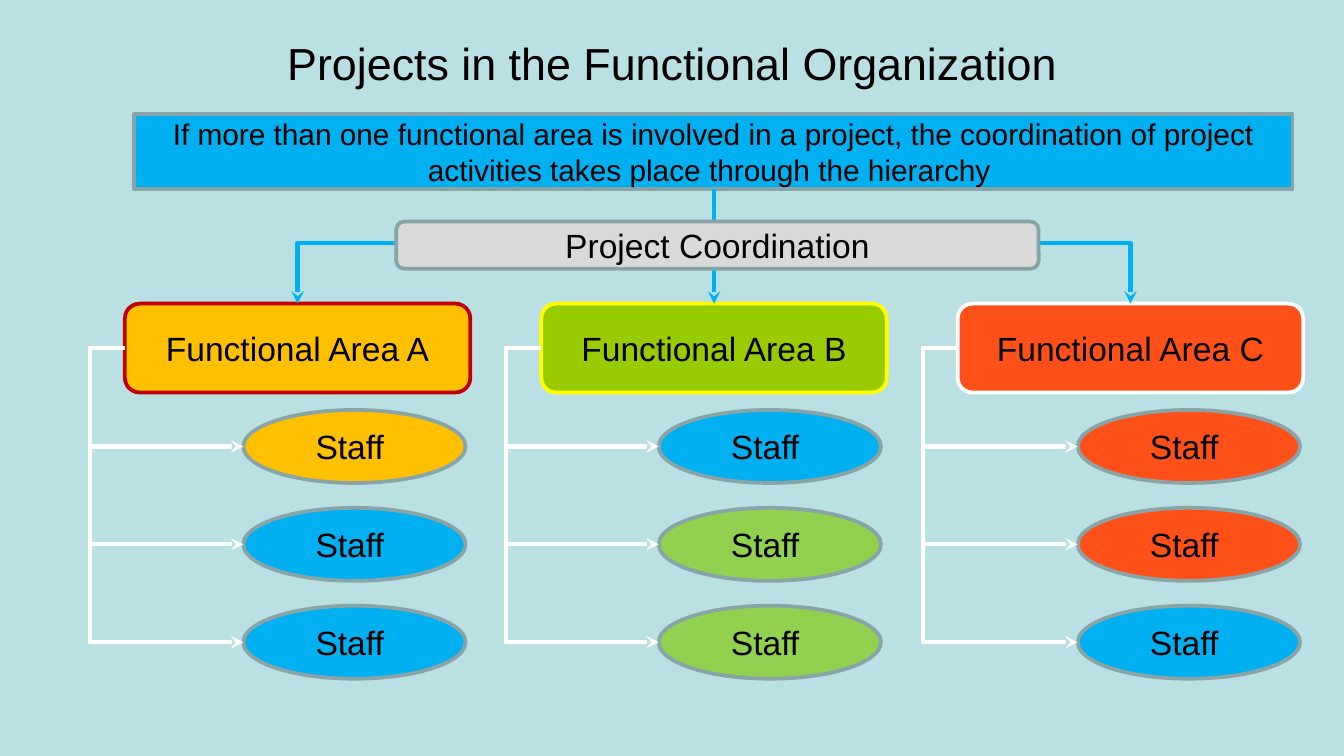
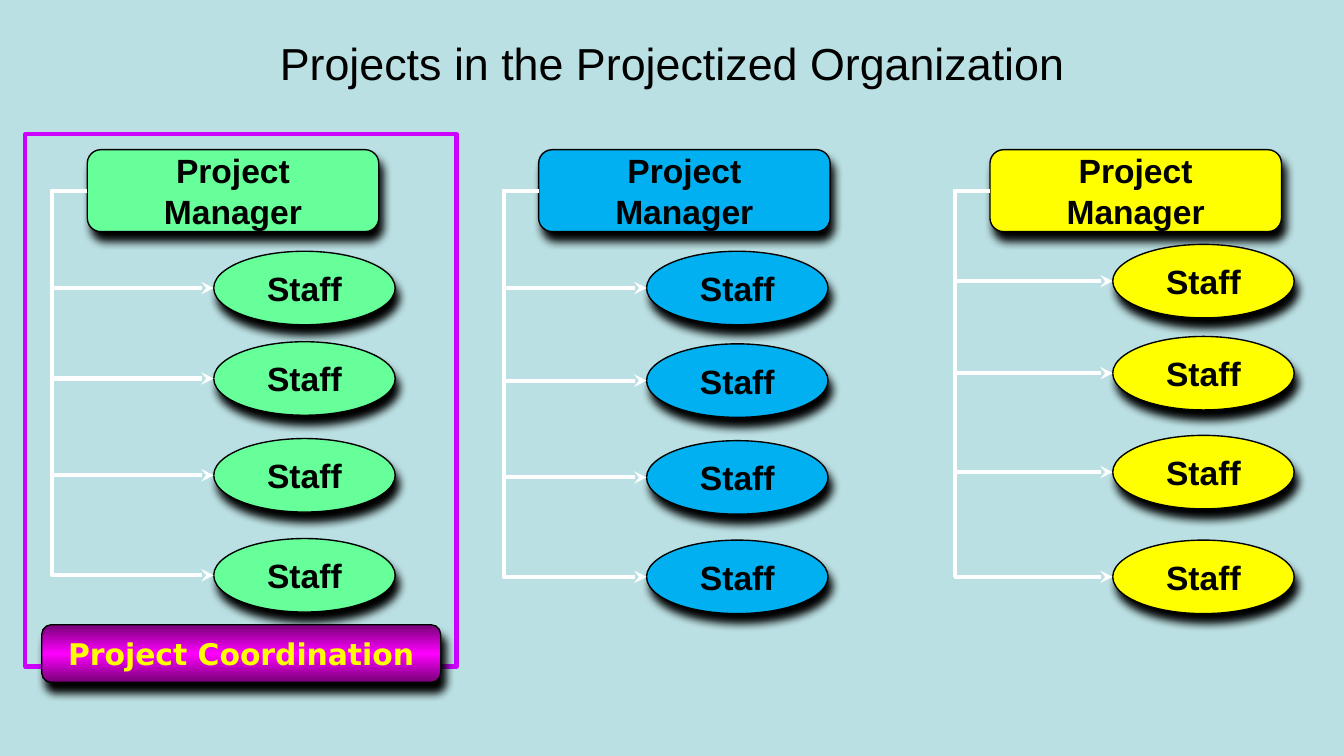
"""Builds two organization charts: functional and projectized projects."""
from copy import deepcopy

from lxml import etree
from pptx import Presentation
from pptx import util as u
from pptx.dml.color import RGBColor
from pptx.enum import shapes, text
from pptx.oxml.ns import qn

COLOURS = {
    "background": "BBE0E3", "black": "000000", "white": "FFFFFF", "outline": "89A4A7",
    "blue": "00B0F0", "amber": "FFC000", "dark red": "C00000", "olive": "99CC00",
    "green": "92D050", "yellow": "FFFF00", "orange": "FF5019", "grey": "D9D9D9",
    "mint": "66FF99", "violet": "CC00FF", "purple": "760076", "magenta": "FF00FF",
}
KINDS = shapes.MSO_SHAPE
BUS_OFFSET = 0.66


def colour(name):
    return RGBColor.from_string(COLOURS[name])


def add_element(parent, tag, **attributes):
    return etree.SubElement(parent, qn(tag), {key: str(value) for key, value in attributes.items()})


def write_text(shape, content, size=18, font="Arial", ink="black", bold=False):
    frame = shape.text_frame
    frame.word_wrap = True
    frame.vertical_anchor = text.MSO_ANCHOR.MIDDLE
    for index, line in enumerate(content.split("\n")):
        paragraph = frame.add_paragraph() if index else frame.paragraphs[0]
        paragraph.alignment = text.PP_ALIGN.CENTER
        run = paragraph.add_run()
        run.text = line
        run.font.size = u.Pt(size)
        run.font.name = font
        run.font.bold = bold
        run.font.color.rgb = colour(ink)


class ChartBuilder:
    """Holds the shared style and the current slide."""

    def __init__(self):
        self.presentation = Presentation()
        self.presentation.slide_width = u.Cm(25.4)
        self.presentation.slide_height = u.Cm(14.29)
        self.slide = None

    def start_slide(self, title):
        self.slide = self.presentation.slides.add_slide(self.presentation.slide_layouts[6])
        fill = self.slide.background.fill
        fill.solid()
        fill.fore_color.rgb = colour("background")
        box = self.slide.shapes.add_textbox(u.Cm(1.27), u.Cm(0), u.Cm(22.86), u.Cm(2.38))
        write_text(box, title, size=24)

    def box(self, kind, bounds, fill=None, line="outline", width=2, shadow=False):
        shape = self.slide.shapes.add_shape(kind, *map(u.Cm, bounds))
        shape.line.color.rgb = colour(line)
        shape.line.width = u.Pt(width)
        if fill:
            shape.fill.solid()
            shape.fill.fore_color.rgb = colour(fill)
        else:
            shape.fill.background()
        shape.shadow.inherit = False
        if shadow:
            effects = shape.element.spPr.find(qn("a:effectLst"))
            outer = add_element(effects, "a:outerShdw", blurRad=u.Pt(5), dist=u.Pt(5.4),
                                dir=68 * 60000, algn="ctr", rotWithShape=0)
            add_element(outer, "a:srgbClr", val=COLOURS["black"])
        return shape

    def labelled(self, kind, bounds, content, fill, **style):
        write_text(self.box(kind, bounds, fill, **style), content)

    def raised(self, kind, bounds, content, fill, **format):
        shape = self.box(kind, bounds, fill, line="black", width=0.75, shadow=True)
        write_text(shape, content, bold=True, **format)
        return shape

    def gradient(self, shape, names):
        shape.fill.gradient()
        shape.fill.gradient_angle = 90
        stop_list = shape.element.spPr.find(".//" + qn("a:gsLst"))
        stop_list.append(deepcopy(stop_list[0]))
        for index, (stop, name) in enumerate(zip(shape.fill.gradient_stops, names)):
            stop.position = index / (len(names) - 1)
            stop.color.rgb = colour(name)

    def arrow(self, start, end, line, geometry="bentConnector3", bend=None):
        connector = self.slide.shapes.add_connector(
            shapes.MSO_CONNECTOR.ELBOW, *map(u.Cm, start + end))
        connector.line.color.rgb = colour(line)
        connector.line.width = u.Pt(2.25)
        properties = connector.element.spPr
        preset = properties.find(qn("a:prstGeom"))
        preset.set("prst", geometry)
        if bend is not None:
            add_element(preset.find(qn("a:avLst")), "a:gd", name="adj1",
                        fmla=f"val {round(bend * 100000)}")
        add_element(properties.find(qn("a:ln")), "a:tailEnd", type="stealth")
        add_element(properties, "a:effectLst")

    def bus(self, start, staff_left, staff_centres):
        bend = -BUS_OFFSET / (staff_left - start[0])
        for centre in staff_centres:
            self.arrow(start, (staff_left, centre), "white", bend=bend)


def build_functional(chart):
    chart.start_slide("Projects in the Functional Organization")
    area_top, area_width, area_height = 5.74, 6.53, 1.68
    staff_width, staff_height = 4.2, 1.38
    staff_tops = [7.75 + 1.85 * row for row in range(3)]
    areas = [
        ("A", "amber", "dark red", 4.6, ("amber", "blue", "blue")),
        ("B", "olive", "yellow", 12.45, ("blue", "green", "green")),
        ("C", "orange", "white", 20.37, ("orange", "orange", "blue")),
    ]
    area_centres = []
    for column, (letter, fill, line, staff_left, staff_fills) in enumerate(areas):
        left = 2.36 + 7.87 * column
        area_centres.append(left + area_width / 2)
        chart.labelled(KINDS.ROUNDED_RECTANGLE, (left, area_top, area_width, area_height),
                       f"Functional Area {letter}", fill, line=line)
        for top, staff_fill in zip(staff_tops, staff_fills):
            chart.labelled(KINDS.OVAL, (staff_left, top, staff_width, staff_height),
                           "Staff ", staff_fill)
        chart.bus((left, area_top + area_height / 2), staff_left,
                  [top + staff_height / 2 for top in staff_tops])

    banner = chart.box(KINDS.RECTANGLE, (2.54, 2.16, 21.89, 1.42), "blue")
    write_text(banner, "If more than one functional area is involved in a project, the coordination "
               "of project activities takes place through the hierarchy ", size=16)
    left_centre, middle, right_centre = area_centres
    chart.arrow((12.45, 4.6), (left_centre, area_top), "blue", "bentConnector2")
    chart.arrow((middle, 3.58), (middle, area_top), "blue", "straightConnector1")
    chart.arrow((middle, 4.6), (right_centre, area_top), "blue", "bentConnector2")
    chart.labelled(KINDS.ROUNDED_RECTANGLE, (7.49, 4.19, 12.14, 0.89),
                   "Project Coordination", "grey")


def build_projectized(chart):
    chart.start_slide("Projects in the Projectized Organization")
    chart.box(KINDS.RECTANGLE, (0.48, 2.54, 8.15, 10.06), line="violet", width=2.25)
    manager_top, manager_height, staff_height = 2.83, 1.55, 1.39
    teams = [
        ("mint", 4.04, (4.75, 6.46, 8.29, 10.18)),
        ("blue", 12.22, (4.75, 6.5, 8.33, 10.21)),
        ("yellow", 21.03, (4.62, 6.36, 8.23, 10.21)),
    ]
    for column, (fill, staff_left, staff_tops) in enumerate(teams):
        left = 1.65 + 8.53 * column
        chart.raised(KINDS.FLOWCHART_ALTERNATE_PROCESS,
                     (left, manager_top, 5.51, manager_height), "Project\nManager", fill)
        for top in staff_tops:
            chart.raised(KINDS.OVAL, (staff_left, top, 3.43, staff_height), "Staff", fill)
        chart.bus((left, manager_top + manager_height / 2), staff_left,
                  [top + staff_height / 2 for top in staff_tops])
    coordination = chart.raised(KINDS.ROUNDED_RECTANGLE, (0.79, 11.81, 7.54, 1.09),
                                "Project Coordination", "magenta",
                                size=16, font="DejaVu Sans", ink="yellow")
    chart.gradient(coordination, ("purple", "magenta", "purple"))


def main():
    chart = ChartBuilder()
    build_functional(chart)
    build_projectized(chart)
    chart.presentation.save("out.pptx")


if __name__ == "__main__":
    main()
